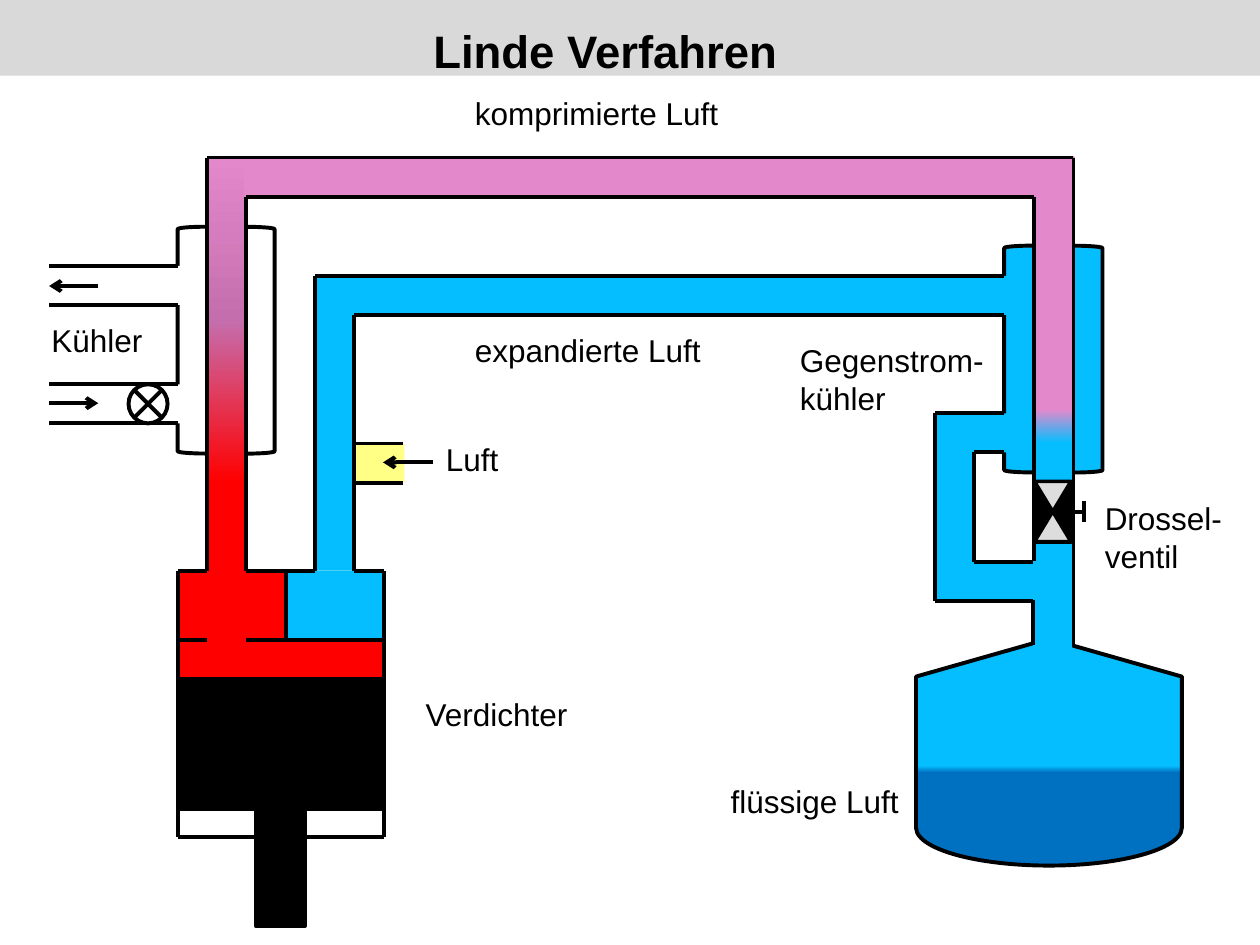
import pptx
import pptx.dml.color
import pptx.enum.shapes
import pptx.enum.text
import pptx.oxml
import pptx.oxml.ns
import pptx.util
from lxml import etree

Inches = pptx.util.Inches
RGBColor = pptx.dml.color.RGBColor
Shape = pptx.enum.shapes.MSO_SHAPE
qn = pptx.oxml.ns.qn

BLACK = RGBColor(0x00, 0x00, 0x00)
WHITE = RGBColor(0xFF, 0xFF, 0xFF)
BANNER = RGBColor(0xD9, 0xD9, 0xD9)
VALVE = RGBColor(0xDD, 0xDD, 0xDD)
HOT = RGBColor(0xFF, 0x00, 0x00)
WARM = RGBColor(0xC5, 0x6E, 0xAE)
COMPRESSED = RGBColor(0xE3, 0x89, 0xCB)
EXPANDED = RGBColor(0x05, 0xBE, 0xFF)
LIQUID = RGBColor(0x00, 0x70, 0xC0)
FRESH = RGBColor(0xFF, 0xFF, 0x85)

PIPE = 0.31
WING = 0.23
STROKE = 2.25


def add_part(page, box, fill, line=None, kind=Shape.RECTANGLE, rotation=0, width=STROKE):
    part = page.shapes.add_shape(kind, *map(Inches, box))
    part.shadow.inherit = False
    part.rotation = rotation
    if fill is None:
        part.fill.background()
    else:
        part.fill.solid()
        part.fill.fore_color.rgb = fill
    if line is None:
        part.line.fill.background()
    else:
        part.line.color.rgb = line
        part.line.width = pptx.util.Pt(width)
    return part


def shade(part, angle, stops):
    part.fill.gradient()
    part.fill.gradient_angle = angle
    stop_list = part._element.spPr.find(qn("a:gradFill")).find(qn("a:gsLst"))
    for stop in list(stop_list):
        stop_list.remove(stop)
    for position, color in stops:
        stop = etree.SubElement(stop_list, qn("a:gs"), pos=str(position * 1000))
        etree.SubElement(stop, qn("a:srgbClr"), val=str(color))


def add_lines(page, *points, arrow=False):
    for start, end in zip(points, points[1:]):
        line = page.shapes.add_connector(
            pptx.enum.shapes.MSO_CONNECTOR.STRAIGHT, *map(Inches, start + end))
        line.line.color.rgb = BLACK
        line.line.width = pptx.util.Pt(STROKE)
        properties = line._element.spPr
        if arrow:
            etree.SubElement(properties.find(qn("a:ln")), qn("a:tailEnd"), type="arrow")
        etree.SubElement(properties, qn("a:effectLst"))


def add_label(page, box, text, size=18, bold=False, wrap=True):
    frame = page.shapes.add_textbox(*map(Inches, box)).text_frame
    frame.word_wrap = wrap
    frame.auto_size = pptx.enum.text.MSO_AUTO_SIZE.SHAPE_TO_FIT_TEXT
    for index, words in enumerate(text.split("\n")):
        para = frame.add_paragraph() if index else frame.paragraphs[0]
        span = para.add_run()
        span.text = words
        span.font.name = "Arial"
        span.font.size = pptx.util.Pt(size)
        span.font.bold = bold
        span.font.color.rgb = BLACK


def add_jacket(page, box, fill):
    x, y, w, h = box
    add_part(page, (x, y, WING, h), fill, BLACK, Shape.LEFT_BRACKET)
    add_part(page, (x + w - WING, y, WING, h), fill, BLACK, Shape.LEFT_BRACKET, 180)


def add_cooler(page, box):
    x, y, w, h = box
    add_jacket(page, box, None)
    outside = x - 1.02
    for top in (y + 0.31, y + 1.25):
        add_part(page, (outside, top, 1.1, PIPE), WHITE)
        for edge in (top, top + PIPE):
            add_lines(page, (x, edge), (outside, edge))
    add_lines(page, (x - 0.63, y + 0.47), (outside, y + 0.47), arrow=True)
    add_lines(page, (outside, y + 1.4), (x - 0.63, y + 1.4), arrow=True)
    add_part(page, (x - 0.39, y + 1.25, PIPE, PIPE), WHITE, BLACK,
             Shape.FLOWCHART_SUMMING_JUNCTION)
    add_label(page, (x - 1.1, y + 0.7, 0.94, 0.4), "Kühler")


def add_expanded_pipe(page, box):
    x, y, w, h = box
    inner_x, inner_y = x + PIPE, y + PIPE
    add_part(page, (x, y, w + 0.1, PIPE), EXPANDED)
    add_part(page, (x, y, PIPE, h), EXPANDED)
    add_part(page, (inner_x, y + 1.33, 0.4, PIPE), FRESH)
    for edge in (y + 1.33, y + 1.33 + PIPE):
        add_lines(page, (inner_x + 0.39, edge), (inner_x, edge))
    add_lines(page, (x + w, y), (x, y), (x, y + h))
    add_lines(page, (x + w, inner_y), (inner_x, inner_y), (inner_x, y + h))
    add_lines(page, (x + 0.94, y + 1.48), (x + 0.54, y + 1.48), arrow=True)
    add_label(page, (x + 0.94, y + 1.25, 1.25, 0.4), "Luft")
    add_label(page, (x + 1.17, y + 0.39, 2.07, 0.4), "expandierte Luft", wrap=False)


def add_bypass(page, box):
    x, y, w, h = box
    right, bottom = x + w, y + h
    port = right - WING
    add_part(page, (x, y, 0.6, PIPE), EXPANDED)
    add_part(page, (x, y, PIPE, h), EXPANDED)
    add_part(page, (x, bottom - PIPE, w, PIPE), EXPANDED)
    add_lines(page, (port, y), (x, y), (x, bottom), (right, bottom))
    add_lines(page, (port, y + PIPE), (x + PIPE, y + PIPE),
              (x + PIPE, bottom - PIPE), (right, bottom - PIPE))


def add_tank(page, box):
    x, y, w, h = box
    turned = (x + (w - h) / 2, y + (h - w) / 2, h, w)
    tank = add_part(page, turned, EXPANDED, BLACK, Shape.FLOWCHART_DISPLAY, 90)
    shade(tank, 180, [(0, LIQUID), (41, LIQUID), (44, EXPANDED), (100, EXPANDED)])
    neck = x + 0.93
    add_part(page, (neck, y - 1.1, PIPE, 1.22), EXPANDED)
    add_lines(page, (neck, y - PIPE), (neck, y + 0.05))
    add_label(page, (x - 1.57, y + 1.09, 1.62, 0.4), "flüssige Luft", wrap=False)


def add_compressed_pipe(page, box):
    x, y, w, h = box
    right = x + w
    inner_x, inner_y, inner_right = x + PIPE, y + PIPE, right - PIPE
    cooled = add_part(page, (x, y, PIPE, 2.58), WARM, WHITE, width=2)
    shade(cooled, 90, [(0, HOT), (50, WARM), (100, COMPRESSED)])
    add_part(page, (x, y + 2.58, PIPE, 0.7), HOT, HOT, width=2)
    add_part(page, (inner_x, y, w - PIPE, PIPE), COMPRESSED, COMPRESSED, width=2)
    add_part(page, (inner_right, y, PIPE, 1.3), COMPRESSED)
    chilled = add_part(page, (inner_right, y + 1.26, PIPE, 1.48), COMPRESSED)
    shade(chilled, 90, [(0, EXPANDED), (32, EXPANDED), (50, COMPRESSED), (100, COMPRESSED)])
    add_lines(page, (x, y + 3.28), (x, y), (right, y), (right, y + h))
    add_lines(page, (inner_x, y + 3.28), (inner_x, inner_y),
              (inner_right, inner_y), (inner_right, y + 3.2))
    add_label(page, (x + 2.03, y - 0.55, 2.22, 0.4), "komprimierte Luft", wrap=False)


def add_compressor(page, box):
    x, y, w, h = box
    right, deck_y = x + w, y + 0.55
    add_part(page, (x, y, 0.86, 0.55), HOT)
    add_part(page, (x + 0.86, y, w - 0.86, 0.55), EXPANDED)
    add_part(page, (x, deck_y, w, 0.4), HOT)
    add_part(page, (x, y + 0.86, w, 1.03), BLACK, BLACK)
    add_part(page, (x + 0.62, y + 1.33, 0.39, 1.49), BLACK, BLACK)
    add_lines(page, (x + 0.23, y), (x, y), (x, y + h), (right, y + h),
              (right, y), (right - 0.24, y))
    add_lines(page, (x + 0.54, y), (x + 1.09, y))
    add_lines(page, (x + 0.86, y), (x + 0.86, deck_y))
    add_lines(page, (x, deck_y), (x + 0.23, deck_y))
    add_lines(page, (x + 0.54, deck_y), (right, deck_y))
    add_label(page, (x + 1.87, y + 0.94, 1.56, 0.4), "Verdichter")


def add_throttle(page, box):
    x, y, w, h = box
    half = h / 2
    add_part(page, box, BLACK, BLACK, width=2)
    add_lines(page, (x + w / 2, y + half), (x + 0.39, y + half))
    for top, rotation in ((y + half, 0), (y, 180)):
        add_part(page, (x, top, w, half), VALVE, BLACK, Shape.ISOSCELES_TRIANGLE, rotation, 2)
    add_lines(page, (x + 0.39, y + half + 0.08), (x + 0.39, y + half - 0.08))
    add_label(page, (x + 0.46, y + 0.09, 1.14, 0.71), "Drossel-\nventil", wrap=False)


def add_exchanger(page, box):
    x, y, w, h = box
    add_jacket(page, box, EXPANDED)
    add_label(page, (x - 1.72, y + 0.71, 1.72, 0.71), "Gegenstrom-kühler")


def add_title(page, box):
    x, y, w, h = box
    add_part(page, box, BANNER)
    add_label(page, (x + 3.34, y + 0.13, 5.91, 0.54), "Linde Verfahren", size=26, bold=True)


def main():
    deck = pptx.Presentation()
    deck.slide_width, deck.slide_height = Inches(10), Inches(7.5)
    page = deck.slides.add_slide(deck.slide_layouts[6])
    add_cooler(page, (1.41, 1.8, 0.77, 1.8))
    add_exchanger(page, (7.97, 1.95, 0.78, 1.8))
    add_tank(page, (7.27, 5.07, 2.11, 1.8))
    add_expanded_pipe(page, (2.5, 2.19, 5.47, 2.34))
    add_bypass(page, (7.42, 3.28, 0.78, 1.49))
    add_compressed_pipe(page, (1.64, 1.25, 6.88, 3.88))
    add_compressor(page, (1.41, 4.53, 1.64, 2.11))
    add_throttle(page, (8.21, 3.82, 0.29, 0.48))
    add_title(page, (0, 0, 10, 0.6))
    deck.save("out.pptx")


if __name__ == "__main__":
    main()
